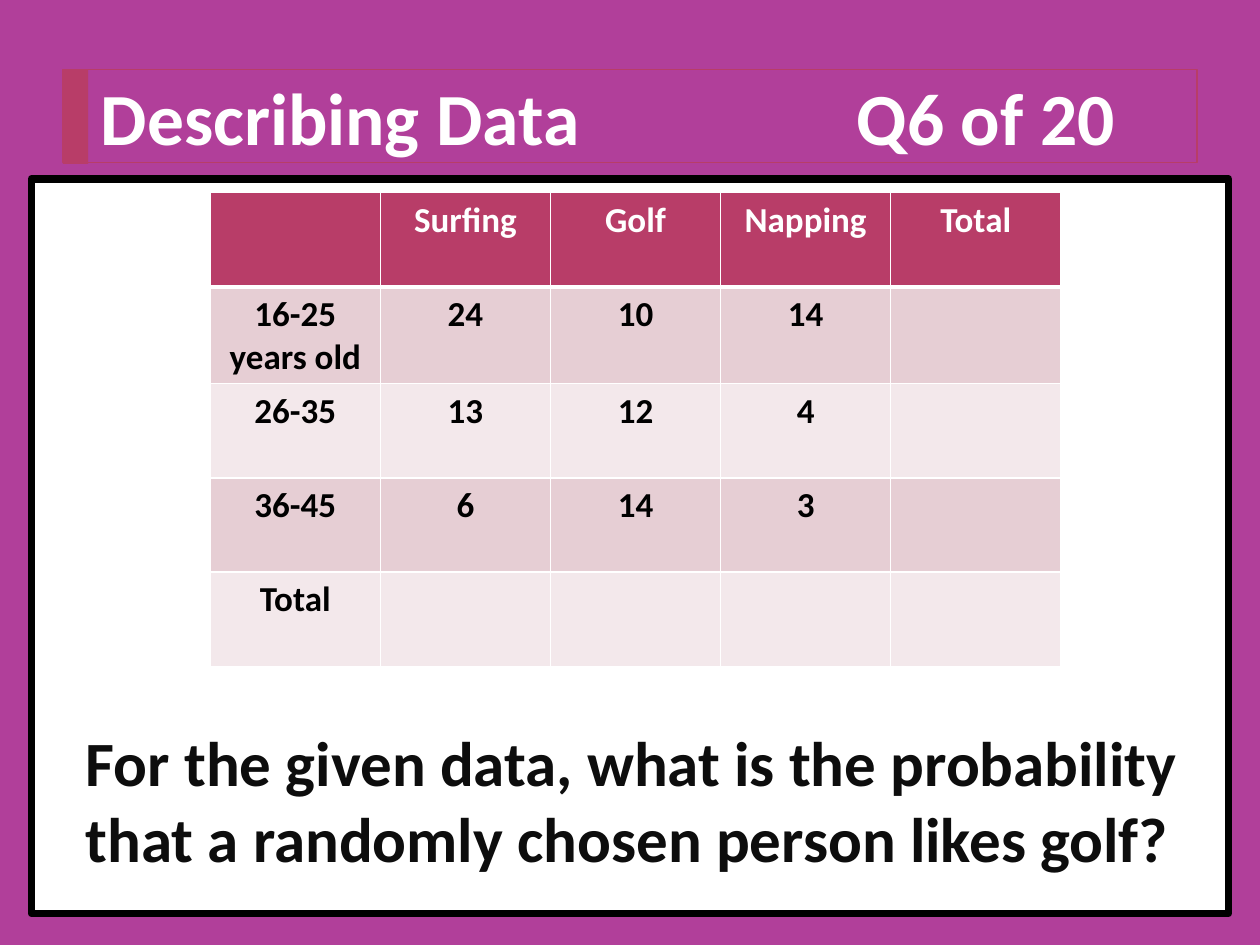
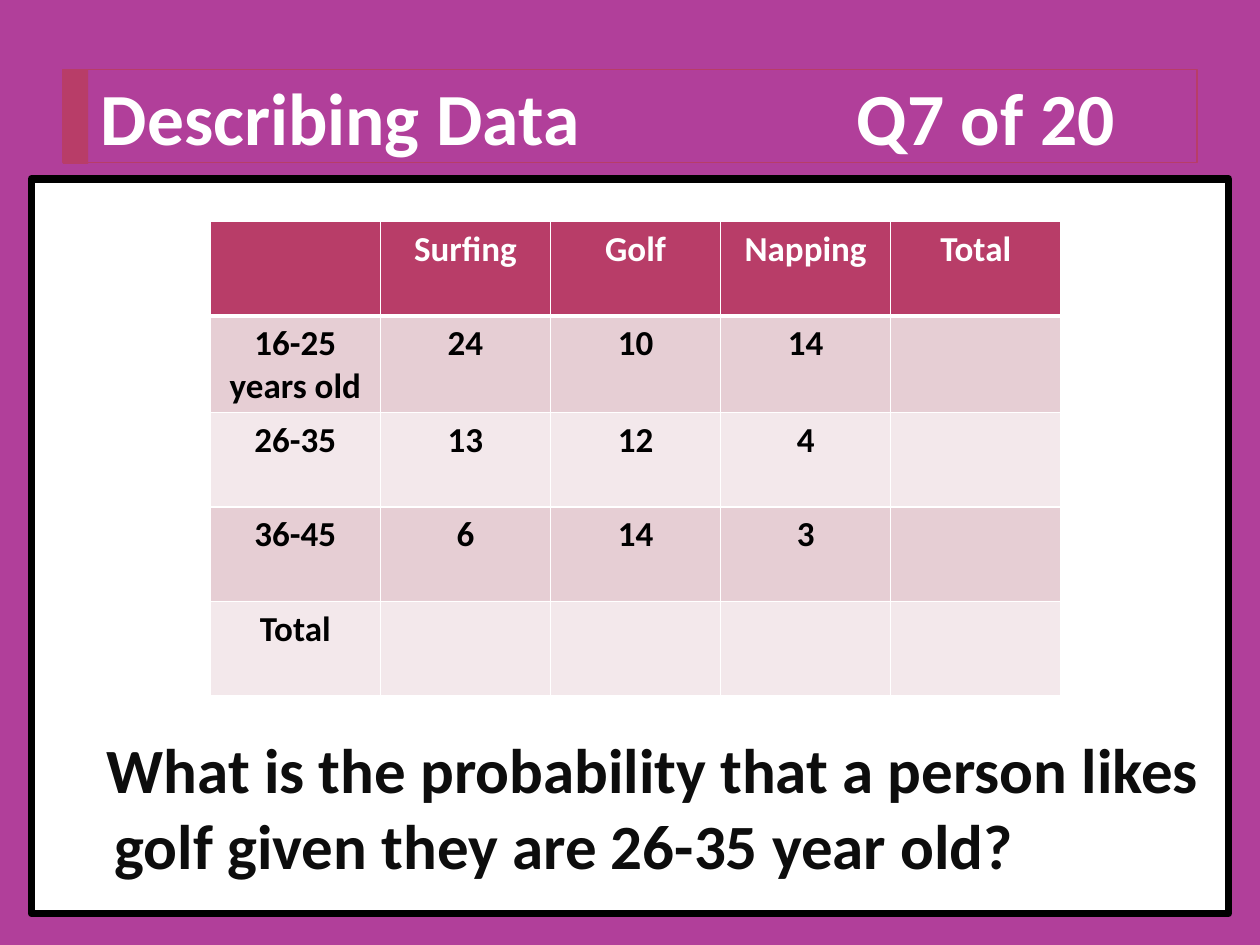
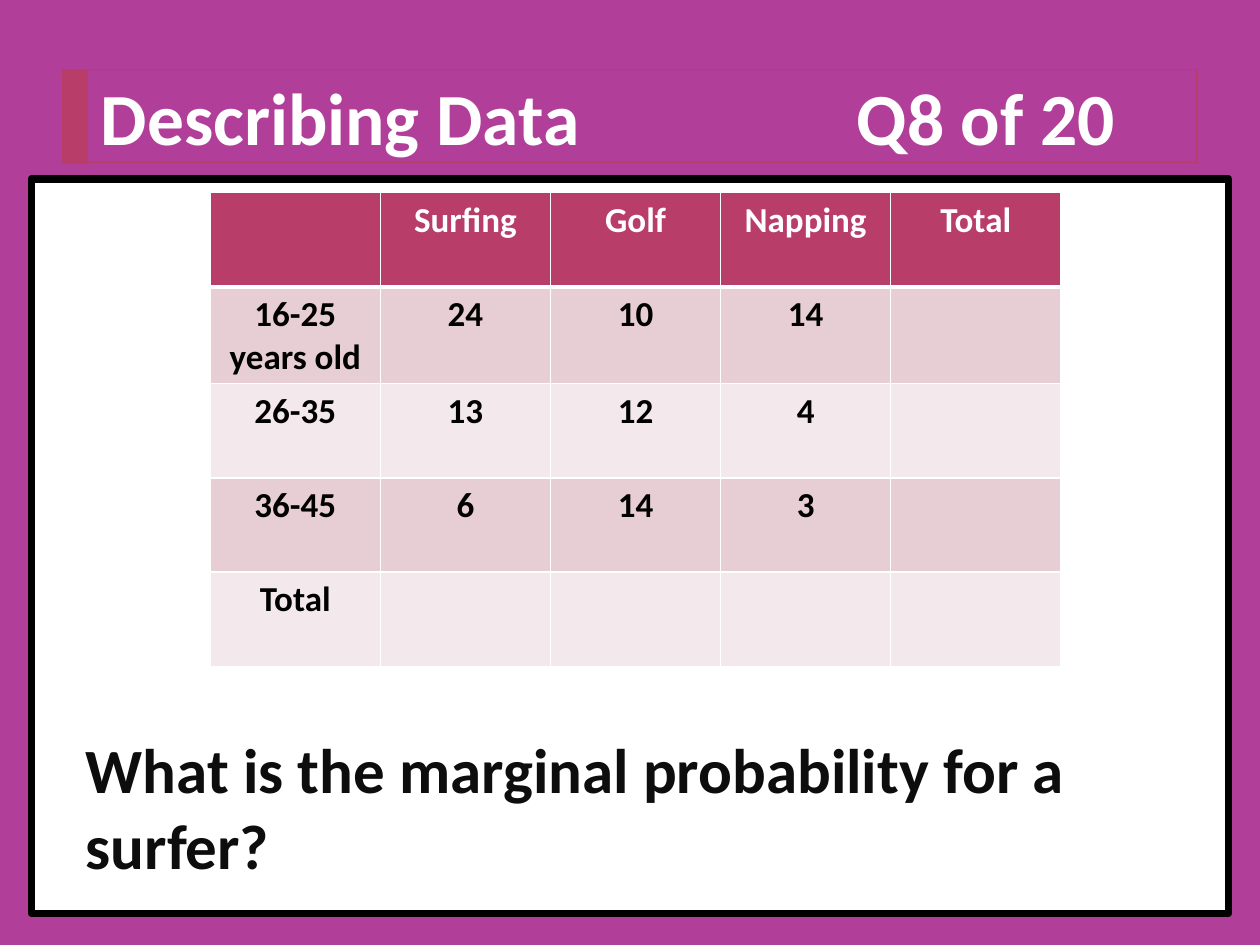
import dataclasses

import lxml.etree
import pptx
import pptx.dml.color
import pptx.enum.shapes
import pptx.enum.text
import pptx.oxml.ns
import pptx.util

Pt = pptx.util.Pt
RGB = pptx.dml.color.RGBColor.from_string


@dataclasses.dataclass(frozen=True)
class Theme:
    font: str = "Calibri"
    background: str = "B13F9A"
    accent: str = "B83D68"
    band_dark: str = "E6CED4"
    band_light: str = "F3E8EB"
    white: str = "FFFFFF"
    black: str = "000000"
    question: str = "0D0D0D"
    title_size: int = 42
    question_size: int = 36
    table_size: int = 20


theme = Theme()


def style_text(p, size, color):
    p.font.name = theme.font
    p.font.size = Pt(size)
    p.font.bold = True
    p.font.color.rgb = RGB(color)


def add_border(cell, side, width):
    qn = pptx.oxml.ns.qn
    ln = lxml.etree.SubElement(cell._tc.get_or_add_tcPr(), qn(f"a:ln{side}"), w=str(Pt(width)))
    fill = lxml.etree.SubElement(ln, qn("a:solidFill"))
    lxml.etree.SubElement(fill, qn("a:srgbClr"), val=theme.white)


survey = [
    ["", "Surfing", "Golf", "Napping", "Total"],
    ["16-25 years old", "24", "10", "14", ""],
    ["26-35", "13", "12", "4", ""],
    ["36-45", "6", "14", "3", ""],
    ["Total", "", "", "", ""],
]
column_width, row_height = 97.2, 53.9

questions = [
    (6, "For the given data, what is the probability that a randomly chosen person likes golf?",
     42, 410, 0, 110),
    (7, "What is the probability that a person likes golf given they are 26-35 year old?",
     54, 414, 4.5, 126.7),
    (8, "What is the marginal probability for a surfer?", 42, 414, 0, 110),
]

prs = pptx.Presentation()
prs.slide_width, prs.slide_height = Pt(720), Pt(540)

for number, question, text_left, text_top, hanging, table_top in questions:
    s = prs.slides.add_slide(prs.slide_layouts[6])
    s.background.fill.solid()
    s.background.fill.fore_color.rgb = RGB(theme.background)

    rectangle = pptx.enum.shapes.MSO_SHAPE.RECTANGLE
    bar = s.shapes.add_shape(rectangle, Pt(36), Pt(39.6), Pt(14.4), Pt(54))
    bar.shadow.inherit = False
    bar.fill.solid()
    bar.fill.fore_color.rgb = RGB(theme.accent)
    bar.line.fill.background()

    title = s.shapes.add_textbox(Pt(36), Pt(39.6), Pt(648), Pt(53.3))
    title.line.color.rgb = RGB(theme.accent)
    title.line.width = Pt(0.75)
    tf = title.text_frame
    tf.word_wrap = True
    tf.margin_left = Pt(21.6)
    tf.vertical_anchor = pptx.enum.text.MSO_ANCHOR.MIDDLE
    p = tf.paragraphs[0]
    p.text = f"Describing Data\tQ{number} of 20"
    tabs = lxml.etree.SubElement(p._p.get_or_add_pPr(), pptx.oxml.ns.qn("a:tabLst"))
    lxml.etree.SubElement(tabs, pptx.oxml.ns.qn("a:tab"), pos=str(Pt(432)), algn="l")
    style_text(p, theme.title_size, theme.white)

    panel = s.shapes.add_shape(rectangle, Pt(18), Pt(102.2), Pt(684), Pt(419.8))
    panel.shadow.inherit = False
    panel.fill.solid()
    panel.fill.fore_color.rgb = RGB(theme.white)
    panel.line.color.rgb = RGB(theme.black)
    panel.line.width = Pt(4.33)

    tf = s.shapes.add_textbox(Pt(text_left), Pt(text_top), Pt(648), Pt(94.3)).text_frame
    tf.word_wrap = True
    p = tf.paragraphs[0]
    p.text = question
    if hanging:
        pPr = p._p.get_or_add_pPr()
        pPr.set("marL", str(Pt(hanging)))
        pPr.set("indent", str(-Pt(hanging)))
    style_text(p, theme.question_size, theme.question)

    rows, columns = len(survey), len(survey[0])
    table = s.shapes.add_table(
        rows, columns, Pt(120.2), Pt(table_top),
        Pt(column_width * columns), Pt(row_height * rows)).table
    for column in table.columns:
        column.width = Pt(column_width)
    for i, values in enumerate(survey):
        table.rows[i].height = Pt(row_height)
        band = theme.accent if i == 0 else theme.band_dark if i % 2 else theme.band_light
        for j, value in enumerate(values):
            cell = table.cell(i, j)
            add_border(cell, "L", 1)
            add_border(cell, "R", 1)
            add_border(cell, "T", 3 if i == 1 else 1)
            add_border(cell, "B", 3 if i == 0 else 1)
            cell.fill.solid()
            cell.fill.fore_color.rgb = RGB(band)
            p = cell.text_frame.paragraphs[0]
            p.text = value
            p.alignment = pptx.enum.text.PP_ALIGN.CENTER
            style_text(p, theme.table_size, theme.black if i else theme.white)

prs.save("out.pptx")
